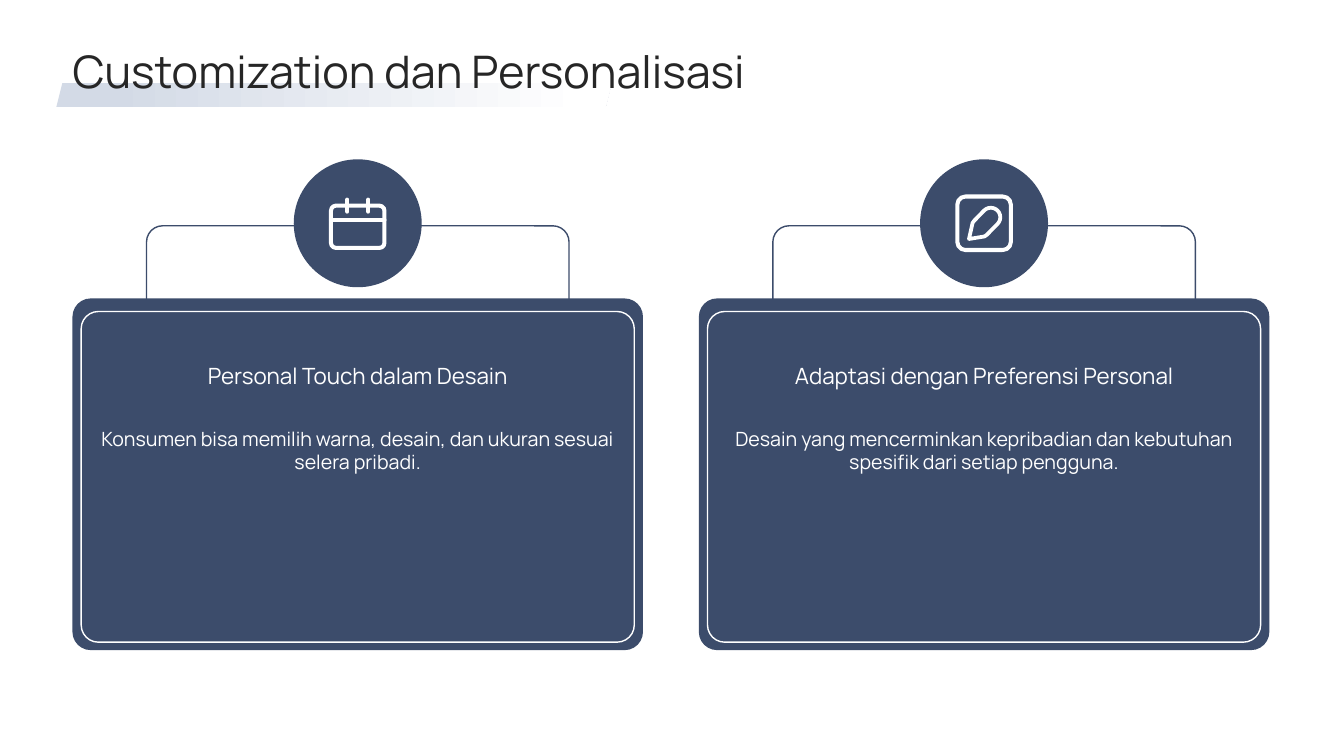
from math import cos, radians, sin

from pptx import Presentation
from pptx.dml.color import RGBColor
from pptx.enum.shapes import MSO_CONNECTOR, MSO_SHAPE
from pptx.enum.text import MSO_ANCHOR, PP_ALIGN
from pptx.oxml.ns import qn
from pptx.util import Pt

NAVY = RGBColor(0x3C, 0x4C, 0x6B)
MIST = RGBColor(0xD3, 0xDA, 0xE6)
INK = RGBColor(0x26, 0x26, 0x26)
WHITE = RGBColor(0xFF, 0xFF, 0xFF)
FONT = "Manrope"
ROUND = MSO_SHAPE.ROUNDED_RECTANGLE
OVAL = MSO_SHAPE.OVAL
SLANT = MSO_SHAPE.PARALLELOGRAM
STRAIGHT = MSO_CONNECTOR.STRAIGHT
TOP, MIDDLE = MSO_ANCHOR.TOP, MSO_ANCHOR.MIDDLE
LEFT, CENTER = PP_ALIGN.LEFT, PP_ALIGN.CENTER

CARD_TOP, CARD_W, CARD_H = 113.8, 407.5, 350.6
CARD_LEFT, CARD_STEP = 51.8, 447.4
CIRCLE = 91.4


def style(sp, fill=None, line=None, width=1):
    """Set the fill and outline of a shape and drop its shadow."""
    sp.shadow.inherit = False
    if fill is None:
        sp.fill.background()
    else:
        sp.fill.solid()
        sp.fill.fore_color.rgb = fill
    if line is None:
        sp.line.fill.background()
    else:
        sp.line.color.rgb = line
        sp.line.width = Pt(width)


def add_box(s, kind, x, y, w, h, fill=None, line=None, width=1, radius=None):
    """Add a preset shape, with an optional corner radius ratio."""
    sp = s.shapes.add_shape(kind, Pt(x), Pt(y), Pt(w), Pt(h))
    if radius is not None:
        sp.adjustments[0] = radius
    style(sp, fill, line, width)
    return sp


def add_text(s, x, y, w, h, text, size, color, align=CENTER, anchor=TOP):
    """Add a text box without margins."""
    tf = s.shapes.add_textbox(Pt(x), Pt(y), Pt(w), Pt(h)).text_frame
    tf.word_wrap = True
    tf.margin_left = tf.margin_top = tf.margin_right = tf.margin_bottom = 0
    tf.vertical_anchor = anchor
    tf.text = text
    p = tf.paragraphs[0]
    p.alignment = align
    font = p.runs[0].font
    font.name, font.size, font.color.rgb = FONT, Pt(size), color


def add_stroke(s, x1, y1, x2, y2):
    """Add a white icon stroke with round ends."""
    c = s.shapes.add_connector(STRAIGHT, Pt(x1), Pt(y1), Pt(x2), Pt(y2))
    c.line.color.rgb = WHITE
    c.line.width = Pt(2.9)
    spPr = c._element.spPr
    spPr.find(qn("a:ln")).set("cap", "rnd")
    spPr.append(spPr.makeelement(qn("a:effectLst"), {}))


def draw_calendar(s, x, y):
    """Draw a calendar icon in the circle at x, y."""
    add_box(s, ROUND, x + 26.6, y + 33.1, 38.2, 30.2,
            line=WHITE, width=2.9, radius=0.12)
    add_stroke(s, x + 26.6, y + 43.2, x + 64.8, y + 43.2)
    for ring in (38.2, 53.2):
        add_stroke(s, x + ring, y + 28.8, x + ring, y + 37.4)


def draw_pencil(s, x, y):
    """Draw a framed pencil icon in the circle at x, y."""
    add_box(s, ROUND, x + 26.6, y + 26.6, 38.2, 38.2,
            line=WHITE, width=2.9, radius=0.15)
    end = [(50.5 + 6.8 * cos(radians(a)), 41.4 + 6.8 * sin(radians(a)))
           for a in range(225, 406, 15)]
    outline = [(37.5, 45.4), (38.7, 43.8), *end, (47.6, 54), (46, 55.1)]
    fb = s.shapes.build_freeform(Pt(x + 34.9), Pt(y + 56.9))
    fb.add_line_segments([(Pt(x + px), Pt(y + py)) for px, py in outline])
    style(fb.convert_to_shape(), line=WHITE, width=2.7)


def draw_card(s, x, y, w, h, heading, body, draw_icon):
    """Draw a card with bracket, icon circle, panel and texts."""
    mid = x + w / 2
    add_box(s, ROUND, mid - 150.9, y + 47.5, 301.8, 221.8,
            line=NAVY, radius=0.052)
    add_box(s, OVAL, mid - CIRCLE / 2, y, CIRCLE, CIRCLE, fill=NAVY)
    draw_icon(s, mid - CIRCLE / 2, y)
    add_box(s, ROUND, x, y + 99.4, w, h - 99.4, fill=NAVY, radius=0.052)
    add_box(s, ROUND, x + 6.2, y + 108.7, w - 12.4, 236.2,
            fill=NAVY, line=WHITE, radius=0.052)
    add_text(s, x + 18.4, y + 190.8, w - 36.8, 141.8, body, 14, WHITE)
    add_text(s, x + 18.4, y + 122.4, w - 36.8, 64.8, heading, 16, WHITE,
             anchor=MIDDLE)


def draw_title(s, x, y, w, h, text):
    """Draw the title over a fading slanted underline."""
    bar = add_box(s, SLANT, x - 11.5, y + 25.2, 396.7, 17.3, fill=MIST)
    bar.fill.gradient()
    bar.fill.gradient_angle = 0
    stops = zip(bar.fill.gradient_stops, (0.1, 0.95), (MIST, WHITE))
    for stop, position, color in stops:
        stop.position = position
        stop.color.rgb = color
    add_text(s, x, y, w, h, text, 32, INK, LEFT, MIDDLE)


def main():
    """Build the slide and save it."""
    prs = Presentation()
    prs.slide_width, prs.slide_height = Pt(960), Pt(540)
    s = prs.slides.add_slide(prs.slide_layouts[6])
    cards = (
        ("Personal Touch dalam Desain",
         "Konsumen bisa memilih warna, desain, dan ukuran sesuai "
         "selera pribadi.", draw_calendar),
        ("Adaptasi dengan Preferensi Personal",
         "Desain yang mencerminkan kepribadian dan kebutuhan spesifik "
         "dari setiap pengguna.", draw_pencil),
    )
    for i, card in enumerate(cards):
        draw_card(s, CARD_LEFT + i * CARD_STEP, CARD_TOP, CARD_W, CARD_H, *card)
    draw_title(s, CARD_LEFT, 33.8, 855.4, 33.8,
               "Customization dan Personalisasi")
    prs.save("out.pptx")


if __name__ == "__main__":
    main()
